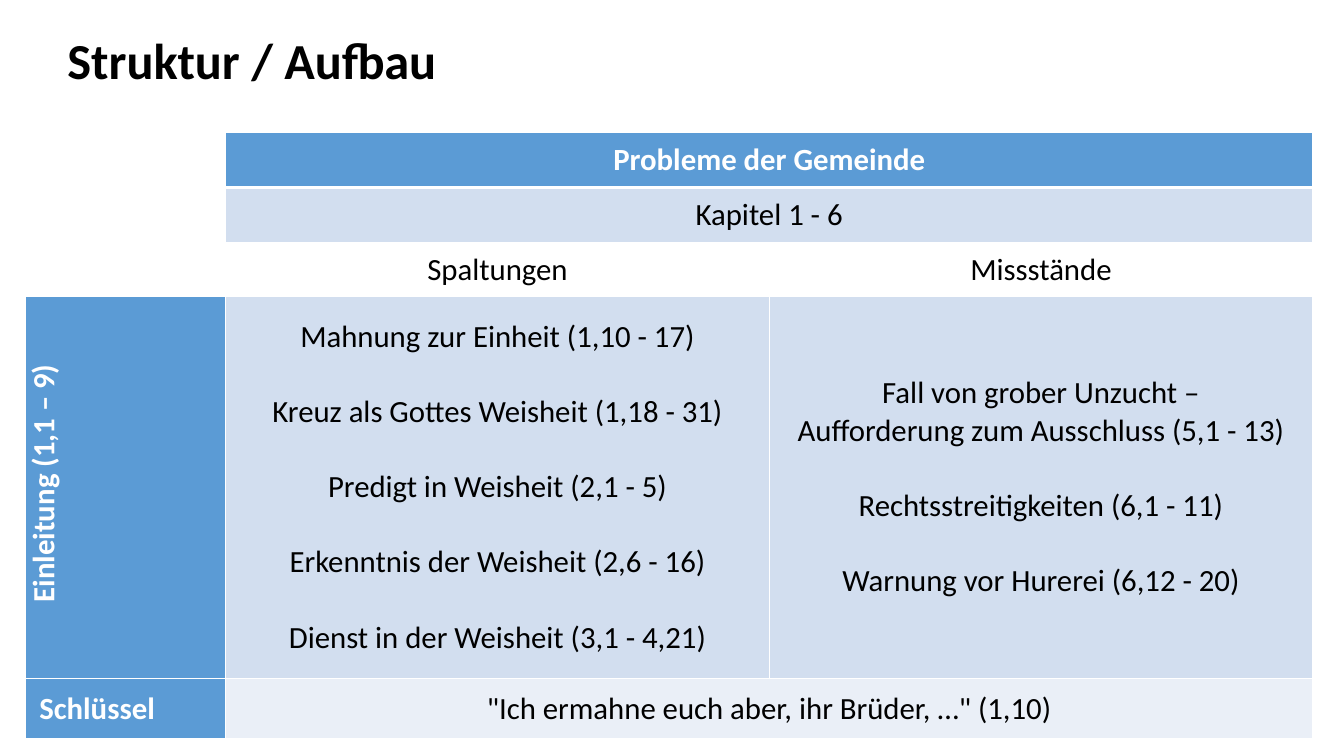
"""Slide with the structure of the letter: title and outline table."""
from lxml import etree
from pptx import Presentation
from pptx import util as u
from pptx.dml.color import RGBColor
from pptx.enum import text
from pptx.oxml.ns import qn

COLORS = {"white": "FFFFFF", "black": "000000", "head": "5B9BD5",
          "band": "D2DEEF", "light": "EAEFF7"}
COLS = [1.99, 5.39, 5.39]
ROWS = [0.55, 0.55, 0.53, 3.79, 0.6]
LINE_GAP = 26.9


def write(tf, paragraphs, size=22, color="black", bold=False, align="CENTER"):
    for i, line in enumerate(paragraphs):
        p = tf.add_paragraph() if i else tf.paragraphs[0]
        p.text = line
        p.alignment = getattr(text.PP_ALIGN, align)
        if i:
            p.space_before = u.Pt(LINE_GAP)
        for r in p.runs:
            r.font.name = "Calibri"
            r.font.size = u.Pt(size)
            r.font.bold = bold
            r.font.color.rgb = RGBColor.from_string(COLORS[color])


def style(cell, fill, bottom=1):
    tcPr = cell._tc.get_or_add_tcPr()
    for side in ("lnL", "lnR", "lnT", "lnB"):
        width = bottom if side == "lnB" else 1
        ln = etree.SubElement(tcPr, qn(f"a:{side}"), w=str(u.Pt(width)))
        line = etree.SubElement(ln, qn("a:solidFill"))
        etree.SubElement(line, qn("a:srgbClr"), val=COLORS["white"])
    cell.fill.solid()
    cell.fill.fore_color.rgb = RGBColor.from_string(COLORS[fill])


prs = Presentation()
prs.slide_width, prs.slide_height = u.Inches(13.33), u.Inches(7.5)
s = prs.slides.add_slide(prs.slide_layouts[6])

tbl = s.shapes.add_table(len(ROWS), len(COLS), u.Inches(0.25), u.Inches(1.31),
                         u.Inches(sum(COLS)), u.Inches(sum(ROWS))).table
for column, width in zip(tbl.columns, COLS):
    column.width = u.Inches(width)
for row, height in zip(tbl.rows, ROWS):
    row.height = u.Inches(height)

fills = [("white", "head", "head"), ("white", "band", "band"),
         ("white", "white", "white"), ("head", "band", "band"),
         ("head", "light", "light")]
for i, row_fills in enumerate(fills):
    for j, fill in enumerate(row_fills):
        style(tbl.cell(i, j), fill, bottom=1 if i else 3)

for i in (0, 1, 4):
    tbl.cell(i, 1).merge(tbl.cell(i, 2))

white_bold = {"color": "white", "bold": True}
contents = [
    (0, 1, ["Probleme der Gemeinde"], white_bold),
    (1, 1, ["Kapitel 1 - 6"], {}),
    (2, 1, ["Spaltungen"], {}),
    (2, 2, ["Missstände"], {}),
    (3, 0, ["Einleitung (1,1 – 9)"], white_bold),
    (3, 1, ["Mahnung zur Einheit (1,10 - 17)",
            "Kreuz als Gottes Weisheit (1,18 - 31)",
            "Predigt in Weisheit (2,1 - 5)",
            "Erkenntnis der Weisheit (2,6 - 16)",
            "Dienst in der Weisheit (3,1 - 4,21)"], {}),
    (3, 2, ["Fall von grober Unzucht –\vAufforderung zum Ausschluss (5,1 - 13)",
            "Rechtsstreitigkeiten (6,1 - 11)",
            "Warnung vor Hurerei (6,12 - 20)"], {}),
    (4, 0, ["Schlüssel"], {**white_bold, "align": "LEFT"}),
    (4, 1, ['"Ich ermahne euch aber, ihr Brüder, …" (1,10)'], {}),
]
for i, j, paragraphs, fmt in contents:
    cell = tbl.cell(i, j)
    cell.vertical_anchor = text.MSO_ANCHOR.MIDDLE
    cell.margin_left = cell.margin_right = u.Inches(0.14)
    cell.margin_top = cell.margin_bottom = 0
    write(cell.text_frame, paragraphs, **fmt)

intro = tbl.cell(3, 0)
intro._tc.get_or_add_tcPr().set("vert", "vert270")
pPr = intro.text_frame.paragraphs[0]._p.get_or_add_pPr()
pPr.set("marL", str(u.Inches(0.08)))

title = s.shapes.add_textbox(u.Inches(0.57), u.Inches(0.24),
                             u.Inches(3.91), u.Inches(0.71))
title.text_frame.word_wrap = False
title.text_frame.auto_size = text.MSO_AUTO_SIZE.SHAPE_TO_FIT_TEXT
write(title.text_frame, ["Struktur / Aufbau"], size=36, bold=True, align="LEFT")

prs.save("out.pptx")
